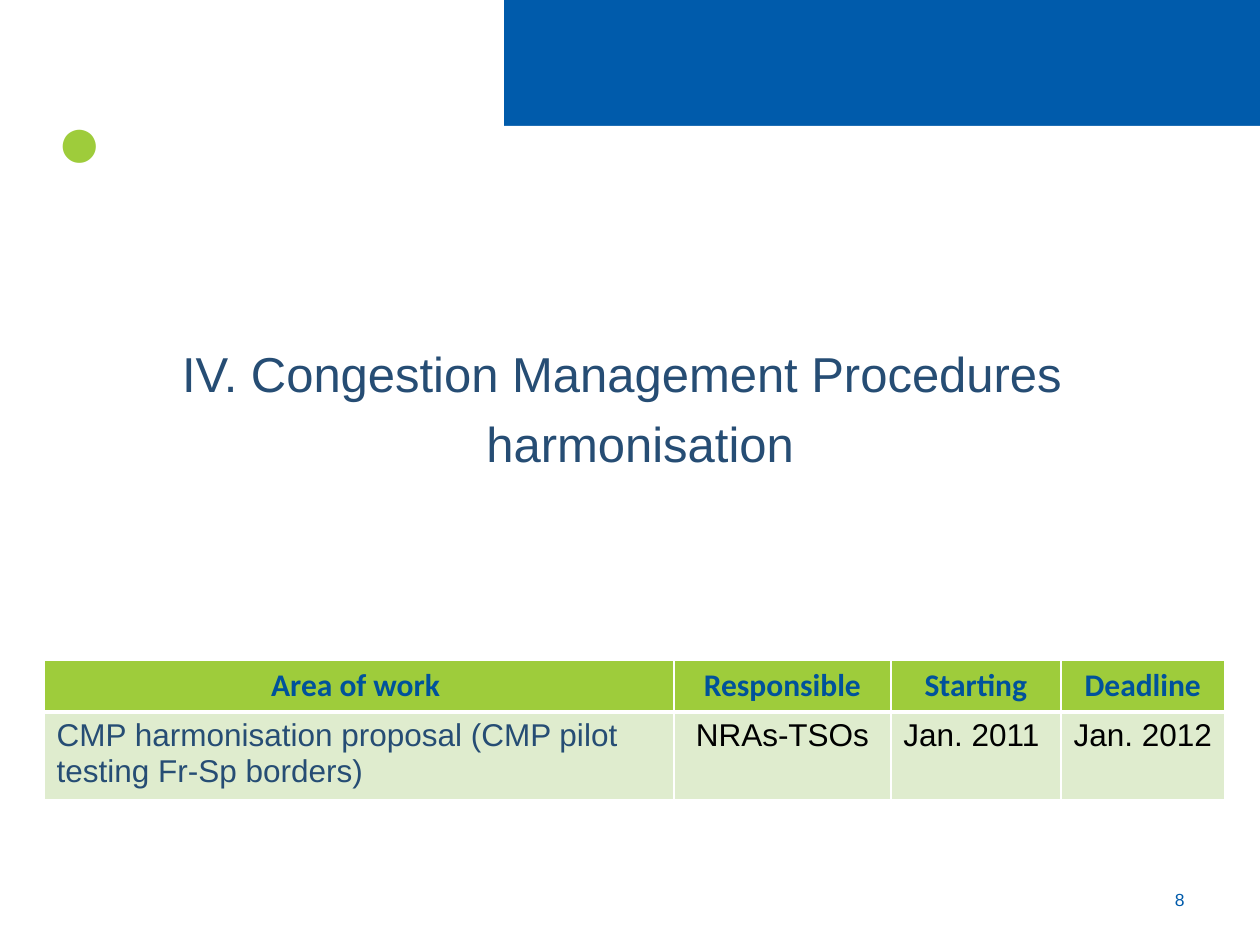
from dataclasses import dataclass

from lxml import etree
from pptx import Presentation
from pptx import util as u
from pptx.dml.color import RGBColor
from pptx.enum import shapes, text
from pptx.oxml import ns


@dataclass(frozen=True)
class Theme:
    blue: str = "005BAB"
    header_blue: str = "00529B"
    navy: str = "264D74"
    green: str = "9ECC3B"
    pale_green: str = "DFECCE"
    white: str = "FFFFFF"
    black: str = "000000"
    body_font: str = "Arial"
    header_font: str = "Calibri"
    title_size: int = 28
    table_size: int = 18
    number_size: int = 10
    dot_size: int = 44


THEME = Theme()
CENTER = text.PP_ALIGN.CENTER
COLUMN_WIDTHS = (5, 1.72, 1.35, 1.3)
ROW_HEIGHTS = (0.41, 0.7)
ROWS = (
    ("Area of work ", "Responsible", "Starting", "Deadline"),
    ("CMP harmonisation proposal (CMP pilot testing Fr‐Sp borders)",
     "NRAs-TSOs", "Jan. 2011 ", "Jan. 2012"),
)


def place(shape, left, top, width, height):
    shape.left, shape.top = u.Inches(left), u.Inches(top)
    shape.width, shape.height = u.Inches(width), u.Inches(height)


def paint(shape, color):
    shape.fill.solid()
    shape.fill.fore_color.rgb = RGBColor.from_string(color)
    shape.line.fill.background()
    shape.shadow.inherit = False


def add_span(para, words, size, color, font=THEME.body_font, bold=False):
    span = para.add_run()
    span.text = words
    span.font.name = font
    span.font.size = u.Pt(size)
    span.font.bold = bold
    span.font.color.rgb = RGBColor.from_string(color)


def curve_points(start, first, second, end, steps=60):
    for step in range(1, steps + 1):
        t = step / steps
        weights = ((1 - t) ** 3, 3 * t * (1 - t) ** 2, 3 * t * t * (1 - t), t ** 3)
        yield tuple(
            sum(weight * value for weight, value in zip(weights, axis))
            for axis in zip(start, first, second, end)
        )


def add_wave(page):
    band = page.shapes.add_shape(
        shapes.MSO_SHAPE.RECTANGLE, 0, 0, u.Inches(10), u.Inches(1.15))
    paint(band, THEME.blue)
    left, crest, right = (0, 1.1), (1.31, 0.21), (10, 0.61)
    outline = [
        *curve_points(left, (0.03, 0.79), (0.23, 0.21), crest),
        *curve_points(crest, (2.76, 0.21), (5.1, 0.94), right),
        (10, 7.5),
        (0, 7.5),
    ]
    builder = page.shapes.build_freeform(*left, scale=u.Inches(1))
    builder.add_line_segments(outline, close=True)
    paint(builder.convert_to_shape(), THEME.white)


def add_label(page, words, bounds, size, color, align, anchor, wrap):
    box = page.shapes.add_textbox(0, 0, 0, 0)
    place(box, *bounds)
    frame = box.text_frame
    frame.word_wrap = wrap
    frame.vertical_anchor = anchor
    para = frame.paragraphs[0]
    para.alignment = align
    add_span(para, words, size, color)


def set_title(page, words):
    title = page.shapes.title
    place(title, 0.51, 2.58, 8.75, 1.91)
    frame = title.text_frame
    frame.word_wrap = True
    frame.auto_size = text.MSO_AUTO_SIZE.NONE
    frame.vertical_anchor = text.MSO_ANCHOR.TOP
    para = frame.paragraphs[0]
    para.alignment = CENTER
    para.line_spacing = 1.2
    para.space_before = u.Pt(6)
    para.space_after = u.Pt(2)
    properties = para._p.get_or_add_pPr()
    properties.set("marL", str(u.Inches(0.39)))
    properties.set("indent", str(u.Inches(-0.29)))
    add_span(para, words, THEME.title_size, THEME.navy)


def set_borders(cell, top, bottom):
    properties = cell._tc.get_or_add_tcPr()
    widths = {"lnL": 1, "lnR": 1, "lnT": top, "lnB": bottom}
    for position, (side, width) in enumerate(widths.items()):
        line = etree.Element(ns.qn(f"a:{side}"), w=str(u.Pt(width)))
        fill = etree.SubElement(line, ns.qn("a:solidFill"))
        etree.SubElement(fill, ns.qn("a:srgbClr"), val=THEME.white)
        properties.insert(position, line)


def fill_cell(cell, words, is_header, is_first):
    cell.fill.solid()
    cell.fill.fore_color.rgb = RGBColor.from_string(
        THEME.green if is_header else THEME.pale_green)
    set_borders(cell, 1 if is_header else 3, 3 if is_header else 1)
    para = cell.text_frame.paragraphs[0]
    if is_header:
        para.alignment = CENTER
        add_span(para, words, THEME.table_size, THEME.header_blue,
                 THEME.header_font, True)
    else:
        para.alignment = text.PP_ALIGN.LEFT if is_first else CENTER
        add_span(para, words, THEME.table_size,
                 THEME.navy if is_first else THEME.black)


def add_schedule(page):
    frame = page.shapes.add_table(
        len(ROWS), len(COLUMN_WIDTHS), u.Inches(0.35), u.Inches(5.24),
        u.Inches(sum(COLUMN_WIDTHS)), u.Inches(sum(ROW_HEIGHTS)))
    table = frame.table
    for column, width in zip(table.columns, COLUMN_WIDTHS):
        column.width = u.Inches(width)
    for row, height in zip(table.rows, ROW_HEIGHTS):
        row.height = u.Inches(height)
    for row, entries in enumerate(ROWS):
        for column, words in enumerate(entries):
            fill_cell(table.cell(row, column), words, row == 0, column == 0)


def main():
    deck = Presentation()
    deck.slide_width, deck.slide_height = u.Inches(10), u.Inches(7.5)
    page = deck.slides.add_slide(deck.slide_layouts.get_by_name("Title Only"))
    add_wave(page)
    add_label(page, "8", (8.94, 6.94, 0.56, 0.4), THEME.number_size, THEME.blue,
              text.PP_ALIGN.RIGHT, text.MSO_ANCHOR.MIDDLE, True)
    add_label(page, "●", (0.35, 0.57, 0.55, 0.94), THEME.dot_size, THEME.green,
              CENTER, text.MSO_ANCHOR.BOTTOM, False)
    title = page.shapes.title
    page.shapes._spTree.append(title._element)
    set_title(page, "IV. Congestion Management Procedures harmonisation")
    add_schedule(page)
    deck.save("out.pptx")


if __name__ == "__main__":
    main()
